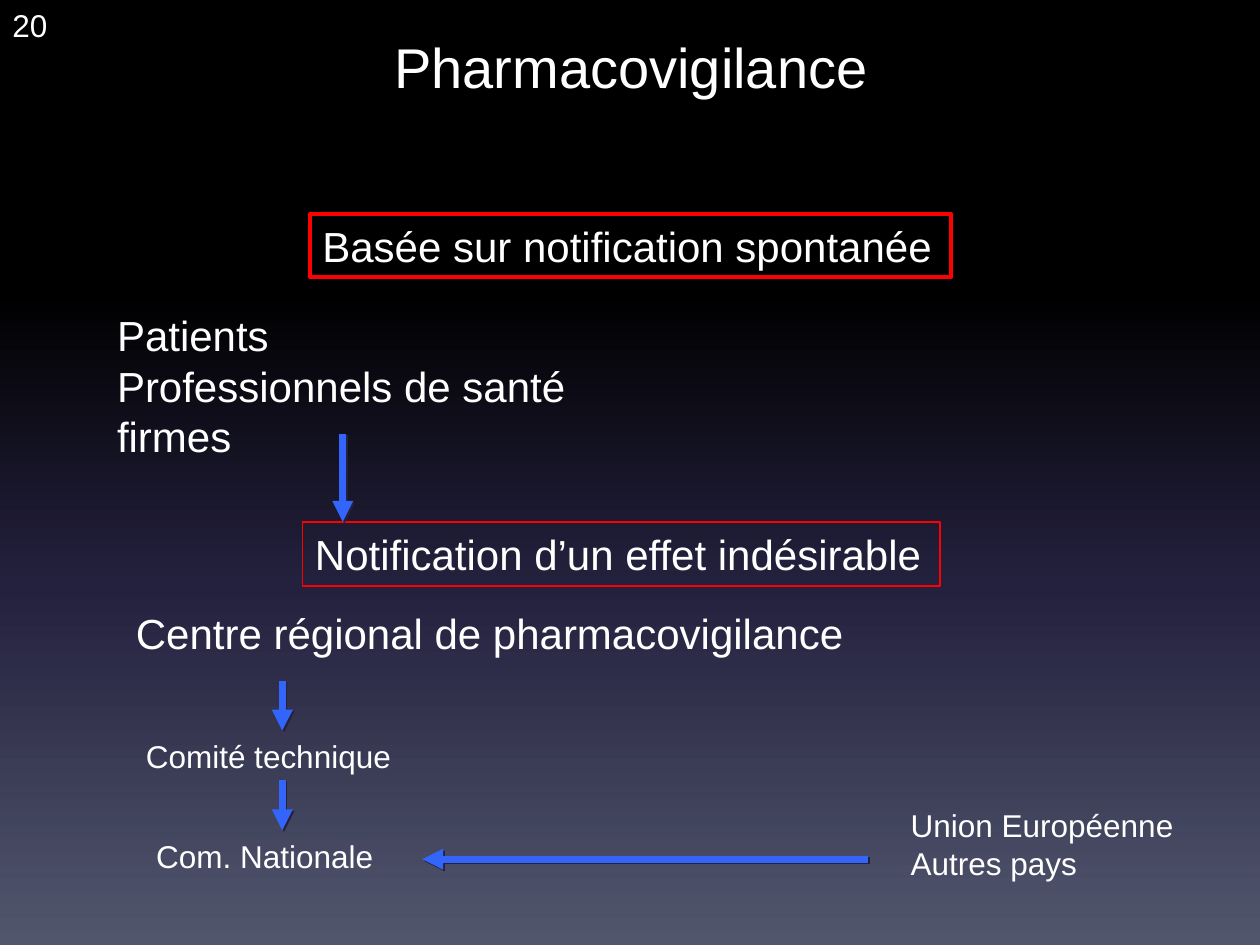
"""Build the pharmacovigilance notification flow slide."""
from dataclasses import dataclass

import lxml.etree
import pptx
import pptx.dml.color
import pptx.enum.shapes
import pptx.enum.text
import pptx.oxml
import pptx.oxml.ns
import pptx.slide
import pptx.util
from pptx.util import Cm

WHITE = pptx.dml.color.RGBColor(0xFF, 0xFF, 0xFF)
RED = pptx.dml.color.RGBColor(0xFF, 0x00, 0x00)
BLUE = pptx.dml.color.RGBColor(0x33, 0x65, 0xFB)
NIGHT = pptx.dml.color.RGBColor(0x24, 0x21, 0x3E)
BLACK = pptx.dml.color.RGBColor(0x00, 0x00, 0x00)
SLATE = pptx.dml.color.RGBColor(0x51, 0x56, 0x6D)

FONT = "Arial"
BACKGROUND_STOPS = ((0, BLACK), (31, BLACK), (62, NIGHT), (100, SLATE))
NAMESPACES = pptx.oxml.ns.nsdecls("a", "p")


@dataclass(frozen=True)
class Label:
    lines: tuple[str, ...]
    left: float
    top: float
    width: float
    height: float
    size: int
    border: float = 0


@dataclass(frozen=True)
class Arrow:
    start_x: float
    start_y: float
    end_x: float
    end_y: float


STEP_X = 5.69
LABELS = (
    Label(("20",), 0, 0, 1.22, 1.02, 18),
    Label(("Pharmacovigilance",), 7.7, 0.53, 10.13, 1.63, 32),
    Label(("Basée sur notification spontanée",), 6.25, 4.32, 12.93, 1.27, 24, 2.25),
    Label(("Patients", "Professionnels de santé", "firmes"), 2.11, 6.12, 9.65, 3.33, 24),
    Label(("Notification d’un effet indésirable",), 6.1, 10.52, 12.85, 1.3, 24, 1),
    Label(("Centre régional de pharmacovigilance",), 2.49, 12.12, 14.91, 1.27, 24),
    Label(("Comité technique",), 2.69, 14.73, 5.51, 1.02, 18),
    Label(("Com. Nationale",), 2.9, 16.74, 4.93, 1.02, 18),
    Label(("Union Européenne", "Autres pays"), 18.11, 16.13, 5.87, 1.8, 18),
)
ARROWS = (
    Arrow(6.91, 8.74, 6.91, 10.52),
    Arrow(STEP_X, 13.72, STEP_X, 14.73),
    Arrow(STEP_X, 15.72, STEP_X, 16.74),
    Arrow(17.5, 17.32, 8.51, 17.32),
)


def paint_background(page: pptx.slide.Slide) -> None:
    stops = "".join(
        f'<a:gs pos="{percent * 1000}"><a:srgbClr val="{color}"/></a:gs>'
        for percent, color in BACKGROUND_STOPS
    )
    background = pptx.oxml.parse_xml(
        f'<p:bg {NAMESPACES}><p:bgPr><a:gradFill rotWithShape="0">'
        f'<a:gsLst>{stops}</a:gsLst><a:lin ang="5400000" scaled="0"/>'
        "</a:gradFill><a:effectLst/></p:bgPr></p:bg>"
    )
    page.element.cSld.insert(0, background)


def draw_label(page: pptx.slide.Slide, label: Label) -> None:
    box = page.shapes.add_textbox(
        Cm(label.left), Cm(label.top), Cm(label.width), Cm(label.height)
    )
    if label.border:
        box.line.color.rgb = RED
        box.line.width = pptx.util.Pt(label.border)
    frame = box.text_frame
    frame.word_wrap = False
    frame.auto_size = pptx.enum.text.MSO_AUTO_SIZE.SHAPE_TO_FIT_TEXT
    frame.text = "\n".join(label.lines)
    for para in frame.paragraphs:
        para.font.name = FONT
        para.font.size = pptx.util.Pt(label.size)
        para.font.color.rgb = WHITE


def draw_arrow(page: pptx.slide.Slide, arrow: Arrow) -> None:
    connector = page.shapes.add_connector(
        pptx.enum.shapes.MSO_CONNECTOR.STRAIGHT,
        Cm(arrow.start_x), Cm(arrow.start_y), Cm(arrow.end_x), Cm(arrow.end_y),
    )
    connector.line.color.rgb = BLUE
    connector.line.width = pptx.util.Pt(4)
    properties = connector.element.spPr
    outline = properties.find(pptx.oxml.ns.qn("a:ln"))
    lxml.etree.SubElement(outline, pptx.oxml.ns.qn("a:tailEnd"), type="triangle")
    properties.append(
        pptx.oxml.parse_xml(
            f'<a:effectLst {NAMESPACES}><a:outerShdw dist="{pptx.util.Pt(1.4)}" '
            f'dir="2700000" algn="ctr" rotWithShape="0"><a:srgbClr val="{NIGHT}"/>'
            "</a:outerShdw></a:effectLst>"
        )
    )


def main() -> None:
    deck = pptx.Presentation()
    deck.slide_width, deck.slide_height = Cm(25.4), Cm(19.05)
    page = deck.slides.add_slide(deck.slide_layouts[6])
    paint_background(page)
    for label in LABELS:
        draw_label(page, label)
    for arrow in ARROWS:
        draw_arrow(page, arrow)
    deck.save("out.pptx")


if __name__ == "__main__":
    main()
